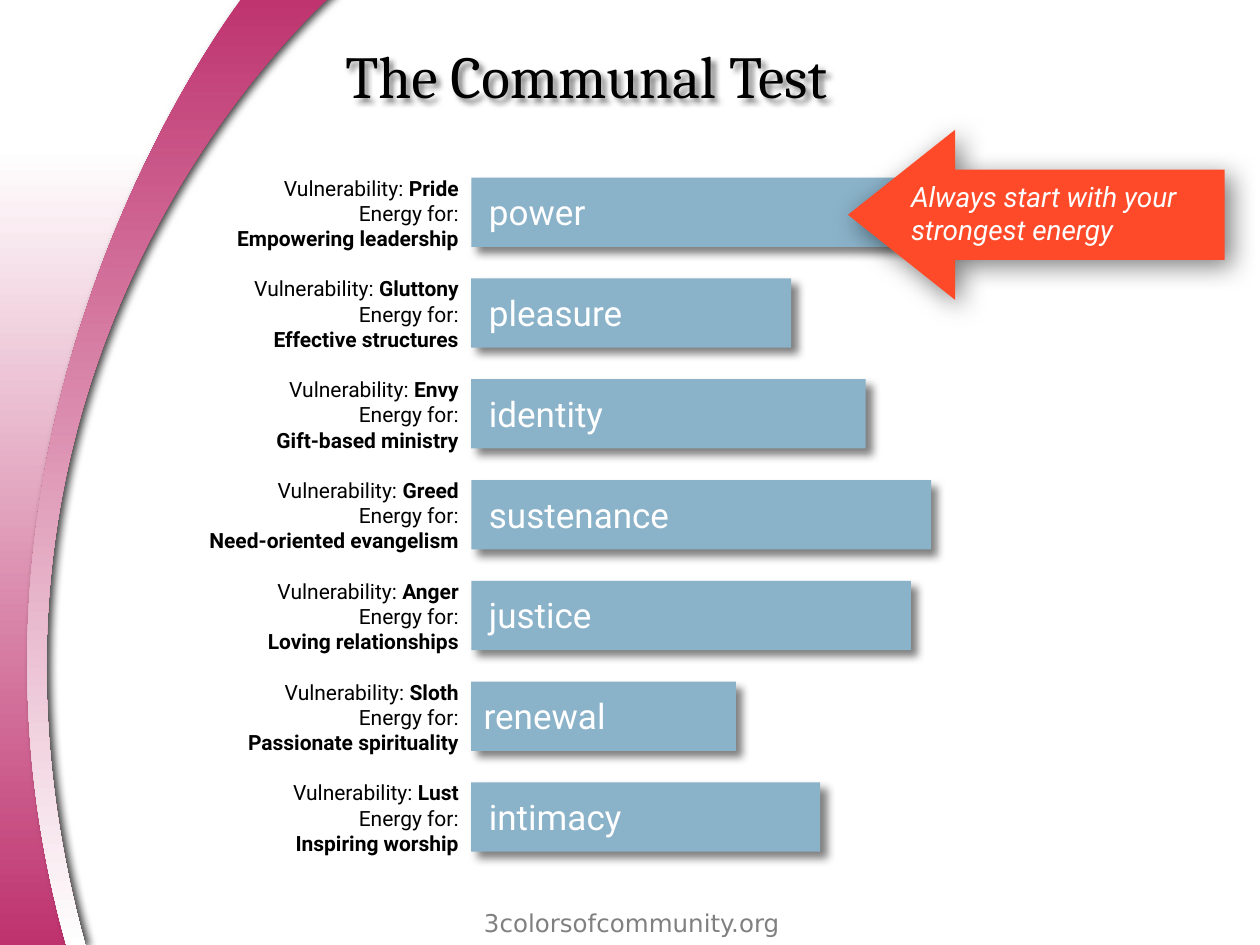
"""Builds the Communal Test slide: seven energies as bars, with their vulnerabilities."""
from lxml.etree import SubElement
from pptx import Presentation
from pptx.dml.color import RGBColor
from pptx.enum.shapes import MSO_SHAPE
from pptx.enum.text import MSO_ANCHOR, MSO_AUTO_SIZE, PP_ALIGN
from pptx.oxml.ns import qn
from pptx.util import Inches, Pt

WIDTH, HEIGHT = 10, 7.5
BAR_LEFT, BAR_TOP, BAR_HEIGHT, ROW = 3.74, 1.41, 0.55, 0.8
COLORS = {"pink": "BE326E", "white": "FFFFFF", "black": "000000",
          "bar": "8AB2C9", "arrow": "FF4A29", "gray": "808080"}
ENERGIES = [
    ("power", 3.92, "Pride", "Empowering leadership"),
    ("pleasure", 2.54, "Gluttony", "Effective structures"),
    ("identity", 3.13, "Envy", "Gift-based ministry"),
    ("sustenance", 3.65, "Greed", "Need-oriented evangelism"),
    ("justice", 3.49, "Anger", "Loving relationships"),
    ("renewal", 2.1, "Sloth", "Passionate spirituality"),
    ("intimacy", 2.77, "Lust", "Inspiring worship"),
]
FADE = [(0, 1.17),
        [(0.65, 1.17), (0.41, 1.17), (1.51, 1.17)],
        [(-0.35, 4.32), (0.5, 6.89), (0.65, 7.5)],
        [(0.32, 7.5), (0, 7.5), (0, 7.5)],
        [(-0.11, 6.44), (0, 1.17), (0, 1.17)]]
RIBBON = [(0.53, 7.51),
          [(0.61, 7.51), (0.68, 7.51), (0.68, 7.51)],
          [(-0.64, 2.73), (2.67, -0.07), (2.67, -0.07)],
          [(1.97, -0.08)],
          [(1.97, -0.08), (-0.67, 3.26), (0.53, 7.51)]]


def color(name):
    """Return the named colour."""
    return RGBColor.from_string(COLORS[name])


def add_shadow(shape, alpha, blur, distance, angle):
    """Give a shape an outer shadow."""
    effects = SubElement(shape.element.spPr, qn("a:effectLst"))
    shadow = SubElement(effects, qn("a:outerShdw"), blurRad=str(Pt(blur)), dist=str(Pt(distance)),
                        dir=str(angle * 60000), algn="tl", rotWithShape="0")
    black = SubElement(shadow, qn("a:srgbClr"), val=COLORS["black"])
    SubElement(black, qn("a:alpha"), val=str(alpha * 1000))


def style_shape(shape, shadow=None):
    """Remove the outline and replace the theme shadow."""
    shape.line.fill.background()
    if shadow:
        add_shadow(shape, *shadow)
    else:
        shape.shadow.inherit = False


def add_run(paragraph, text, size, name, font="Roboto", **formats):
    """Add one formatted run to a paragraph."""
    run = paragraph.add_run()
    run.text = text
    for key, value in {"size": Pt(size), "name": font, "bold": False, **formats}.items():
        setattr(run.font, key, value)
    run.font.color.rgb = color(name)


def set_frame(frame, anchor=MSO_ANCHOR.TOP, left=0.1, right=0.1, top=0.04, bottom=0.05):
    """Set wrapping, anchor and insets of a text frame."""
    formats = {"word_wrap": True, "auto_size": MSO_AUTO_SIZE.NONE, "vertical_anchor": anchor,
               "margin_left": Inches(left), "margin_right": Inches(right),
               "margin_top": Inches(top), "margin_bottom": Inches(bottom)}
    for key, value in formats.items():
        setattr(frame, key, value)
    return frame


def bend_sides(shape, sides):
    """Turn each side with three points into a cubic curve."""
    path = next(shape.element.iter(qn("a:path")))
    lines = iter(path.findall(qn("a:lnTo")))
    for side in sides:
        segments = [next(lines) for _ in side]
        if len(segments) == 3:
            curve = path.makeelement(qn("a:cubicBezTo"))
            segments[0].addprevious(curve)
            for segment in segments:
                curve.append(segment[0])
                path.remove(segment)


def add_curved_shape(slide, outline, top_color, bottom_color, shadow=None):
    """Draw a curved outline with a vertical gradient."""
    start, *sides = outline
    points = [(x * 1000, y * 1000) for x, y in [start, *sum(sides, [])]]
    builder = slide.shapes.build_freeform(*points[0], scale=Inches(1) / 1000)
    builder.add_line_segments(points[1:], close=True)
    shape = builder.convert_to_shape()
    bend_sides(shape, sides)
    shape.fill.gradient()
    shape.fill.gradient_angle = 270
    for stop, name, position in zip(shape.fill.gradient_stops, (top_color, bottom_color), (0, 1)):
        stop.color.rgb = color(name)
        stop.position = position
    style_shape(shape, shadow)


def add_filled_shape(slide, kind, box, fill, shadow):
    """Add a preset shape with a plain fill and a shadow."""
    shape = slide.shapes.add_shape(kind, *map(Inches, box))
    shape.fill.solid()
    shape.fill.fore_color.rgb = color(fill)
    style_shape(shape, shadow)
    return shape


def format_title(slide):
    """Fill the title and bring it in front of the curves."""
    title = slide.shapes.title
    title.element.getparent().append(title.element)
    box = {"left": 2.64, "top": 0, "width": WIDTH - 2.64, "height": 1.19}
    for key, value in box.items():
        setattr(title, key, Inches(value))
    paragraph = set_frame(title.text_frame, MSO_ANCHOR.MIDDLE).paragraphs[0]
    paragraph.alignment = PP_ALIGN.LEFT
    add_run(paragraph, "The Communal Test", 34, "black", "Cambria")
    add_shadow(title, 50, 3, 3, 45)


def add_bar(slide, row, energy, width):
    """Add the bar of one energy with its name inside."""
    box = (BAR_LEFT, BAR_TOP + row * ROW, width, BAR_HEIGHT)
    bar = add_filled_shape(slide, MSO_SHAPE.RECTANGLE, box, "bar", (50, 5, 5, 45))
    inset = 0.1 if energy == "renewal" else 0.14
    paragraph = set_frame(bar.text_frame, MSO_ANCHOR.MIDDLE, left=inset).paragraphs[0]
    paragraph.alignment = PP_ALIGN.LEFT
    add_run(paragraph, energy, 20, "white")


def add_labels(slide):
    """Add the right-aligned column of vulnerabilities, four lines to a row."""
    box = slide.shapes.add_textbox(*map(Inches, (1.14, 1.35, BAR_LEFT - 1.14, 5.55)))
    frame = set_frame(box.text_frame)
    line = Pt(Inches(ROW / 4).pt)
    for row, (_, _, vulnerability, quality) in enumerate(ENERGIES):
        lines = ([("Vulnerability: ", False), (vulnerability, True)],
                 [("Energy for:", False)], [(quality, True)])
        for index, runs in enumerate(lines):
            first = row == index == 0
            paragraph = frame.paragraphs[0] if first else frame.add_paragraph()
            paragraph.alignment = PP_ALIGN.RIGHT
            paragraph.line_spacing = line
            if row and index == 0:
                paragraph.space_before = line
            for text, bold in runs:
                add_run(paragraph, text, 12, "black", bold=bold)


def add_callout(slide):
    """Add the arrow that points at the strongest energy."""
    arrow = add_filled_shape(slide, MSO_SHAPE.LEFT_ARROW, (6.73, 1.03, 2.99, 1.35),
                             "arrow", (50, 15, 5, 45))
    arrow.adjustments[0], arrow.adjustments[1] = 0.53, 0.63
    frame = set_frame(arrow.text_frame, MSO_ANCHOR.MIDDLE, left=0.05, right=0, top=0, bottom=0.03)
    for index, text in enumerate(("Always start with your", "strongest energy")):
        paragraph = frame.add_paragraph() if index else frame.paragraphs[0]
        paragraph.alignment = PP_ALIGN.LEFT
        add_run(paragraph, text, 16, "white", italic=True)


def add_footer(slide):
    """Add the centred web address at the bottom."""
    box = slide.shapes.add_textbox(*map(Inches, (3.43, HEIGHT - 0.33, 3.17, 0.33)))
    paragraph = set_frame(box.text_frame).paragraphs[0]
    paragraph.alignment = PP_ALIGN.CENTER
    add_run(paragraph, "3colorsofcommunity.org", 14, "gray", "DejaVu Sans")


def main():
    """Build and save the slide."""
    presentation = Presentation()
    presentation.slide_width, presentation.slide_height = Inches(WIDTH), Inches(HEIGHT)
    slide = presentation.slides.add_slide(presentation.slide_layouts[5])
    add_curved_shape(slide, FADE, "white", "pink")
    add_curved_shape(slide, RIBBON, "pink", "white", (75, 5, 3, 0))
    format_title(slide)
    add_footer(slide)
    for row, (energy, width, _, _) in enumerate(ENERGIES):
        add_bar(slide, row, energy, width)
    add_labels(slide)
    add_callout(slide)
    presentation.save("out.pptx")


if __name__ == "__main__":
    main()
